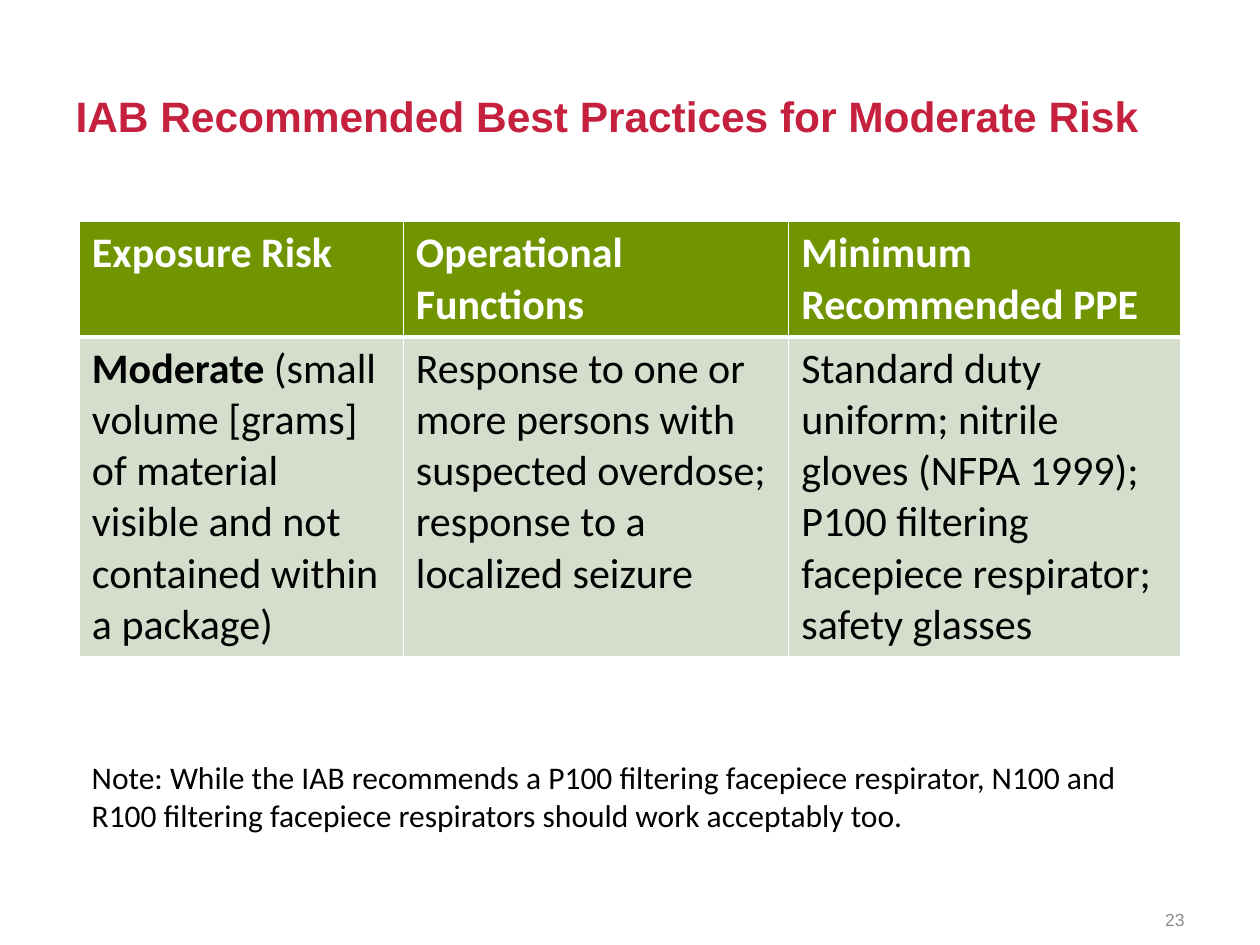
from dataclasses import dataclass

from lxml import etree
from pptx import Presentation
from pptx.dml.color import RGBColor
from pptx.enum.text import MSO_ANCHOR, MSO_AUTO_SIZE, PP_ALIGN
from pptx.oxml.ns import qn
from pptx.util import Cm, Pt

LEFT, RIGHT = PP_ALIGN.LEFT, PP_ALIGN.RIGHT
TOP, MIDDLE = MSO_ANCHOR.TOP, MSO_ANCHOR.MIDDLE
NO_FIT, GROW = MSO_AUTO_SIZE.NONE, MSO_AUTO_SIZE.SHAPE_TO_FIT_TEXT
TITLE_ONLY = 5


@dataclass(frozen=True)
class Theme:
    heading: str = "Arial"
    body: str = "Calibri"
    crimson: str = "C5203E"
    green: str = "719500"
    sage: str = "D5DDCC"
    white: str = "FFFFFF"
    ink: str = "000100"
    grey: str = "8C8C8C"
    title_size: float = 24.3
    table_size: float = 24
    note_size: float = 18
    number_size: float = 10
    rule: float = 1
    header_rule: float = 3


class SlideBuilder:
    def __init__(self, slide, theme):
        self.slide = slide
        self.theme = theme

    def font(self, name, size, color, bold=False):
        return {"name": name, "size": Pt(size), "bold": bold, "color": color}

    def add_run(self, paragraph, text, style):
        run = paragraph.add_run()
        run.text = text
        for key, value in style.items():
            if key == "color":
                run.font.color.rgb = RGBColor.from_string(value)
            else:
                setattr(run.font, key, value)

    def frame(self, shape, text, style, anchor, align, fit):
        settings = {"word_wrap": True, "auto_size": fit, "vertical_anchor": anchor}
        for key, value in settings.items():
            setattr(shape.text_frame, key, value)
        paragraph = shape.text_frame.paragraphs[0]
        paragraph.alignment = align
        self.add_run(paragraph, text, style)
        return paragraph

    def title(self, text, box):
        heading = self.slide.shapes.title
        for key, value in zip(("left", "top", "width", "height"), box):
            setattr(heading, key, Cm(value))
        theme = self.theme
        style = self.font(theme.heading, theme.title_size, theme.crimson, True)
        self.frame(heading, text, style, MIDDLE, LEFT, NO_FIT).line_spacing = 0.8

    def text(self, text, box, style, anchor=TOP, align=LEFT, fit=NO_FIT):
        area = self.slide.shapes.add_textbox(*map(Cm, box))
        self.frame(area, text, style, anchor, align, fit)

    def borders(self, cell, widths):
        properties = cell._tc.get_or_add_tcPr()
        for index, (side, width) in enumerate(widths.items()):
            line = etree.Element(qn(f"a:ln{side}"), w=str(Pt(width)))
            fill = etree.SubElement(line, qn("a:solidFill"))
            etree.SubElement(fill, qn("a:srgbClr"), val=self.theme.white)
            properties.insert(index, line)

    def cell(self, cell, paragraphs, fill, color, widths):
        cell.fill.solid()
        cell.fill.fore_color.rgb = RGBColor.from_string(fill)
        self.borders(cell, widths)
        for index, runs in enumerate(paragraphs):
            frame = cell.text_frame
            paragraph = frame.add_paragraph() if index else frame.paragraphs[0]
            for text, bold in runs:
                style = self.font(self.theme.body, self.theme.table_size, color, bold)
                self.add_run(paragraph, text, style)

    def table(self, left, top, widths, heights, header, body):
        table = self.slide.shapes.add_table(
            2, len(widths), Cm(left), Cm(top), Cm(sum(widths)), Cm(sum(heights))
        ).table
        for column, width in zip(table.columns, widths):
            column.width = Cm(width)
        for row, height in zip(table.rows, heights):
            row.height = Cm(height)
        theme = self.theme
        thin = dict.fromkeys("LRTB", theme.rule)
        header_rules = thin | {"B": theme.header_rule}
        body_rules = thin | {"T": theme.header_rule}
        for index, (label, paragraphs) in enumerate(zip(header, body)):
            self.cell(table.cell(0, index), [[(label, True)]],
                      theme.green, theme.white, header_rules)
            self.cell(table.cell(1, index), paragraphs,
                      theme.sage, theme.ink, body_rules)


HEADER = ["Exposure Risk", "Operational Functions", "Minimum Recommended PPE"]
MODERATE_RISK = [
    [
        [("Moderate", True), (" (small", False)],
        [("volume [grams] of material visible and not contained within a package)", False)],
    ],
    [[("Response to one or more persons with suspected overdose; "
       "response to a localized seizure", False)]],
    [[("Standard duty uniform; nitrile gloves (NFPA 1999); "
       "P100 filtering facepiece respirator; safety glasses", False)]],
]
NOTE = ("Note: While the IAB recommends a P100 filtering facepiece respirator, "
        "N100 and R100 filtering facepiece respirators should work acceptably too.")


def main():
    deck = Presentation()
    deck.slide_width, deck.slide_height = Cm(25.4), Cm(19.05)
    theme = Theme()
    builder = SlideBuilder(deck.slides.add_slide(deck.slide_layouts[TITLE_ONLY]), theme)
    builder.title("IAB Recommended Best Practices for Moderate Risk",
                  (1.27, 1.68, 22.86, 1.5))
    builder.table(1.6, 4.47, (6.53, 7.77, 7.9), (2.29, 6.35), HEADER, MODERATE_RISK)
    builder.text(NOTE, (1.6, 15.16, 22.2, 1.8),
                 builder.font(theme.body, theme.note_size, theme.ink), fit=GROW)
    builder.text("23", (18.21, 18.03, 5.92, 1.02),
                 builder.font(theme.heading, theme.number_size, theme.grey),
                 MIDDLE, RIGHT)
    deck.save("out.pptx")


if __name__ == "__main__":
    main()
